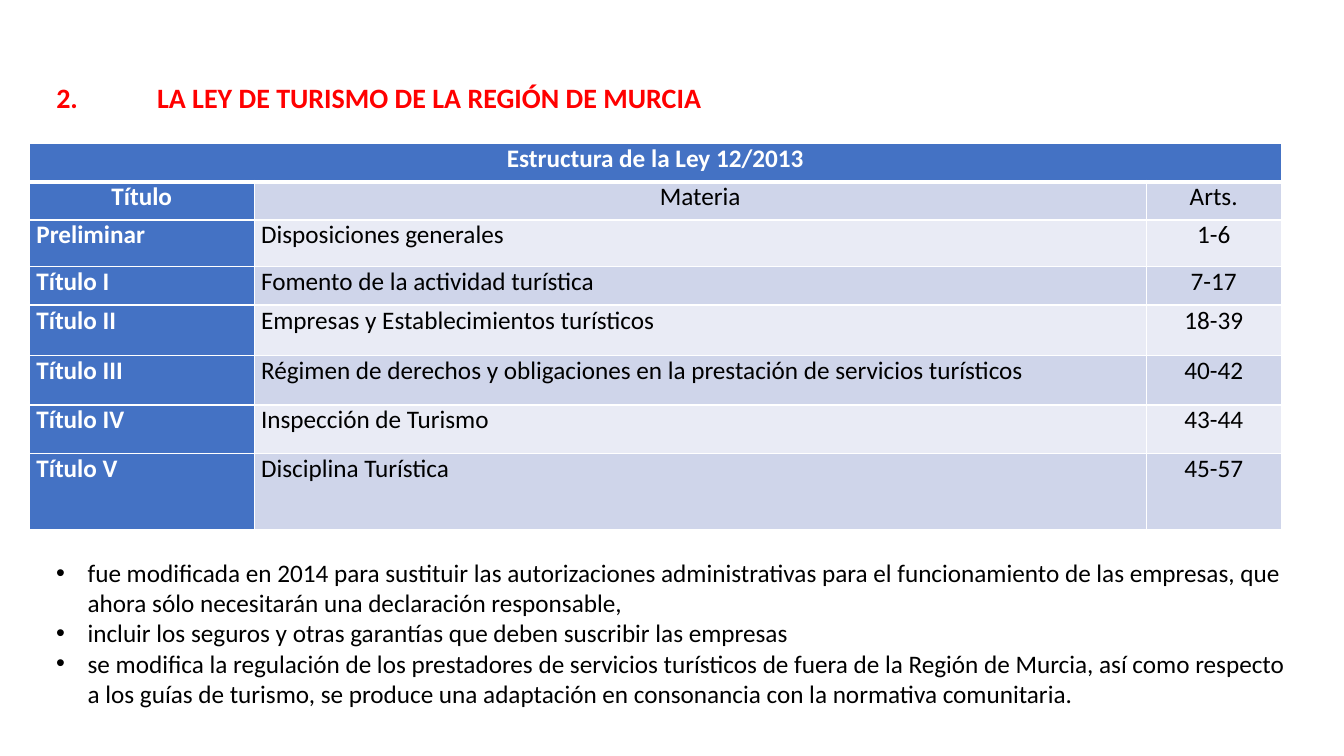
from dataclasses import dataclass

from lxml.etree import SubElement
from pptx import Presentation
from pptx.dml.color import RGBColor
from pptx.enum.text import MSO_ANCHOR, MSO_AUTO_SIZE, PP_ALIGN
from pptx.oxml.ns import qn
from pptx.util import Pt

HEADING = "2.\tLA LEY DE TURISMO DE LA REGIÓN DE MURCIA"
LAW_TITLE = "Estructura de la Ley 12/2013"
COLUMN_NAMES = ("Título", "Materia", "Arts.")
SECTIONS = [
    ("Preliminar", "Disposiciones generales", "1-6"),
    ("Título I", "Fomento de la actividad turística", "7-17"),
    ("Título II", "Empresas y Establecimientos turísticos", "18-39"),
    ("Título III", "Régimen de derechos y obligaciones en la prestación "
                   "de servicios turísticos", "40-42"),
    ("Título IV", "Inspección de Turismo", "43-44"),
    ("Título V", "Disciplina Turística", "45-57"),
]
AMENDMENTS = [
    "fue modificada en 2014 para sustituir las autorizaciones administrativas "
    "para el funcionamiento de las empresas, que ahora sólo necesitarán una "
    "declaración responsable,",
    "incluir los seguros y otras garantías que deben suscribir las empresas",
    "se modifica la regulación de los prestadores de servicios turísticos de "
    "fuera de la Región de Murcia, así como respecto a los guías de turismo, "
    "se produce una adaptación en consonancia con la normativa comunitaria.",
]

# Points: left, top, width, height
HEADING_BOX = (33, 54, 479.5, 31.5)
AMENDMENTS_BOX = (33, 394.5, 904.5, 116.5)
TABLE_LEFT, TABLE_TOP = 21, 102.5
COLUMN_WIDTHS = (160.5, 637.2, 96.5)
ROW_HEIGHTS = (27.3, 27.3, 33.5, 27.3, 35.8, 35.6, 34.5, 54.5)
HEADING_TAB = 72
BULLET_INDENT = 22.5
CELL_MARGIN = 5


@dataclass(frozen=True)
class Theme:
    font: str = "Calibri"
    heading_size: int = 20
    body_size: int = 18
    heading: str = "FF0000"
    text: str = "000000"
    header_text: str = "FFFFFF"
    header_fill: str = "4472C4"
    bands: tuple = ("E9EBF5", "CFD5EA")
    border: str = "FFFFFF"
    thin: float = 1
    thick: float = 3


THEME = Theme()


def add_run(paragraph, text, color, size=THEME.body_size, bold=False):
    run = paragraph.add_run()
    run.text = text
    run.font.name = THEME.font
    run.font.size = Pt(size)
    run.font.bold = bold
    run.font.color.rgb = RGBColor.from_string(color)


def add_border(cell, side, width):
    line = SubElement(cell._tc.get_or_add_tcPr(), qn(f"a:ln{side}"), w=str(Pt(width)))
    fill = SubElement(line, qn("a:solidFill"))
    SubElement(fill, qn("a:srgbClr"), val=THEME.border)


def fill_cell(cell, text, row, column):
    is_header = row == 0 or column == 0
    # The rule under the law title belongs to both rows that share it.
    thick_side = {0: "B", 1: "T"}.get(row)
    for side in "LRTB":
        add_border(cell, side, THEME.thick if side == thick_side else THEME.thin)
    cell.fill.solid()
    cell.fill.fore_color.rgb = RGBColor.from_string(
        THEME.header_fill if is_header else THEME.bands[row % 2])
    cell.margin_left = cell.margin_right = Pt(CELL_MARGIN)
    cell.margin_top = cell.margin_bottom = 0
    paragraph = cell.text_frame.paragraphs[0]
    centred = row < 2 or column == 2
    paragraph.alignment = PP_ALIGN.CENTER if centred else PP_ALIGN.JUSTIFY
    if text:
        add_run(paragraph, text, THEME.header_text if is_header else THEME.text,
                bold=is_header)


def add_heading(slide):
    heading = slide.shapes.title
    heading.left, heading.top, heading.width, heading.height = map(Pt, HEADING_BOX)
    frame = heading.text_frame
    frame.word_wrap = False
    frame.auto_size = MSO_AUTO_SIZE.SHAPE_TO_FIT_TEXT
    frame.vertical_anchor = MSO_ANCHOR.TOP
    paragraph = frame.paragraphs[0]
    paragraph.alignment = PP_ALIGN.LEFT
    tabs = SubElement(paragraph._p.get_or_add_pPr(), qn("a:tabLst"))
    SubElement(tabs, qn("a:tab"), pos=str(Pt(HEADING_TAB)), algn="l")
    add_run(paragraph, HEADING, THEME.heading, THEME.heading_size, bold=True)


def add_structure_table(slide):
    rows = [(LAW_TITLE, "", ""), COLUMN_NAMES, *SECTIONS]
    structure = slide.shapes.add_table(
        len(rows), len(COLUMN_NAMES), Pt(TABLE_LEFT), Pt(TABLE_TOP),
        Pt(sum(COLUMN_WIDTHS)), Pt(sum(ROW_HEIGHTS))).table
    structure.first_row = structure.horz_banding = False
    for column, width in zip(structure.columns, COLUMN_WIDTHS):
        column.width = Pt(width)
    for row, height in zip(structure.rows, ROW_HEIGHTS):
        row.height = Pt(height)
    for r, texts in enumerate(rows):
        for c, text in enumerate(texts):
            fill_cell(structure.cell(r, c), text, r, c)
    structure.cell(0, 0).merge(structure.cell(0, len(COLUMN_NAMES) - 1))


def add_amendments(slide):
    frame = slide.shapes.add_textbox(*map(Pt, AMENDMENTS_BOX)).text_frame
    frame.word_wrap = True
    frame.auto_size = MSO_AUTO_SIZE.SHAPE_TO_FIT_TEXT
    for i, amendment in enumerate(AMENDMENTS):
        paragraph = frame.add_paragraph() if i else frame.paragraphs[0]
        properties = paragraph._p.get_or_add_pPr()
        properties.set("marL", str(Pt(BULLET_INDENT)))
        properties.set("indent", str(-Pt(BULLET_INDENT)))
        SubElement(properties, qn("a:buFont"), typeface="Arial")
        SubElement(properties, qn("a:buChar"), char="•")
        add_run(paragraph, amendment, THEME.text)


def main():
    deck = Presentation()
    deck.slide_width, deck.slide_height = Pt(960), Pt(540)
    slide = deck.slides.add_slide(deck.slide_layouts[5])
    add_heading(slide)
    add_structure_table(slide)
    add_amendments(slide)
    deck.save("out.pptx")


if __name__ == "__main__":
    main()
